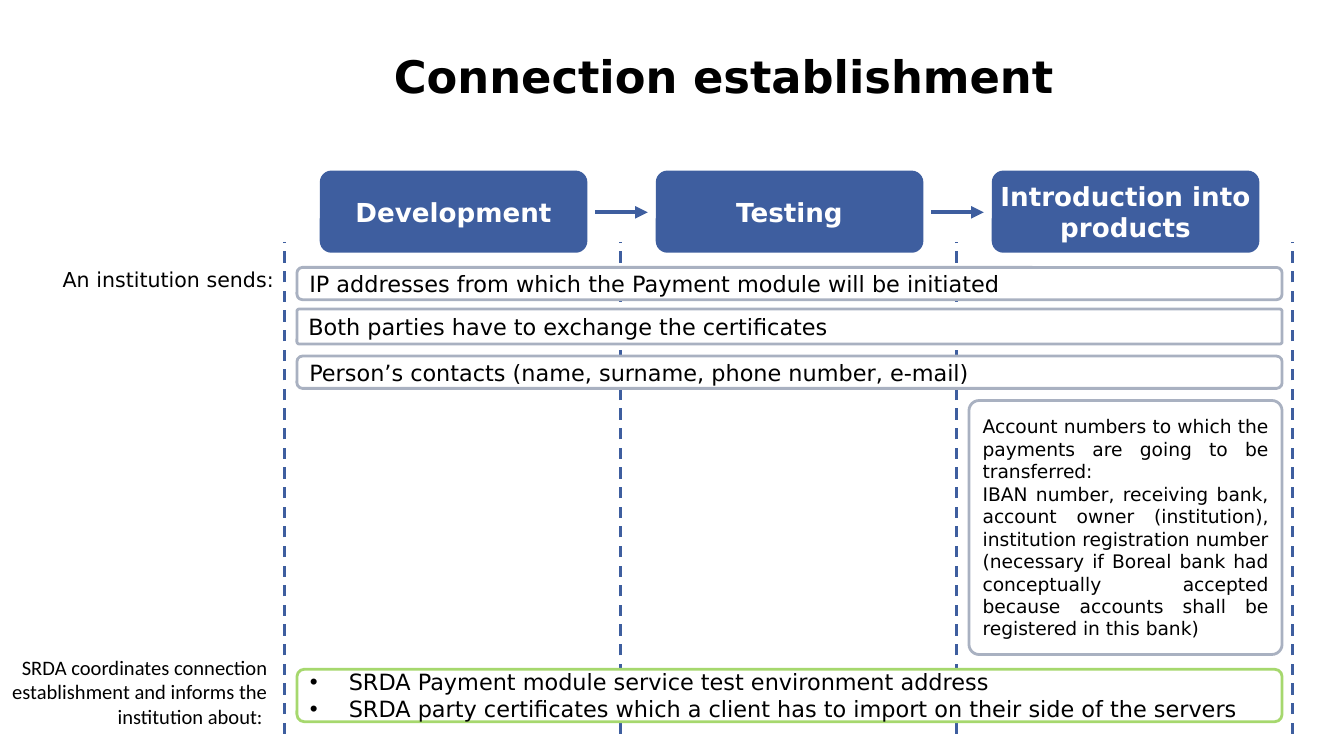
from pptx import Presentation
from pptx.dml.color import RGBColor
from pptx.enum.dml import MSO_LINE
from pptx.enum.shapes import MSO_CONNECTOR, MSO_SHAPE
from pptx.enum.text import MSO_ANCHOR, MSO_AUTO_SIZE, PP_ALIGN
from pptx.oxml.ns import qn
from pptx.util import Pt
from lxml.etree import SubElement

SCALE = 9144
BLUE, GREY, GREEN, WHITE, BLACK = "3E5E9F", "A9B1C1", "A6D86E", "FFFFFF", "000000"
SANS = "DejaVu Sans"

TITLE = "Connection establishment"
PHASES = ["Development", "Testing", "Introduction into products"]
LABELS = [
    ("An institution sends:", (8, 199, 196, 24), SANS),
    ("SRDA coordinates connection establishment and informs the institution about: ",
     (8, 487, 191, 61), "Calibri"),
]
CARDS = [
    dict(lines=["IP addresses from which the Payment module will be initiated"],
         place=(221, 199, 733, 24), corner=0.17),
    dict(lines=["Both parties have to exchange the certificates"],
         place=(221, 230, 733, 26), corner=0.06),
    dict(lines=["Person’s contacts (name, surname, phone number, e-mail)"],
         place=(221, 265, 733, 24), corner=0.17),
    dict(lines=["Account numbers to which the payments are going to be transferred:",
                "IBAN number, receiving bank, account owner (institution), institution "
                "registration number (necessary if Boreal bank had conceptually accepted "
                "because accounts shall be registered in this bank)"],
         place=(721, 298, 233, 189), corner=0.04, size=10),
    dict(lines=["SRDA Payment module service test environment address",
                "SRDA party certificates which a client has to import on their side of the servers"],
         place=(221, 498, 733, 39), corner=0.14, border=GREEN, bullet=True),
]

COLUMN_STEP = 250
DIVIDER_LEFT, DIVIDER_TOP, DIVIDER_BOTTOM = 212, 180, 546
PHASE_LEFT, PHASE_TOP, PHASE_WIDTH, PHASE_HEIGHT = 239, 128, 197, 59
ARROW_LEFT, ARROW_WIDTH, ARROW_Y = 443, 39, 158


def px(*values):
    return [value * SCALE for value in values]


def colour(hex_string):
    return RGBColor.from_string(hex_string)


def add_bullet(paragraph):
    properties = paragraph._p.get_or_add_pPr()
    properties.set("marL", str(29 * SCALE))
    properties.set("indent", str(-29 * SCALE))
    SubElement(properties, qn("a:buFont")).set("typeface", "Arial")
    SubElement(properties, qn("a:buChar")).set("char", "•")


def write(box, lines, align, insets, anchor=MSO_ANCHOR.MIDDLE, bullet=False,
          ink=BLACK, fit=MSO_AUTO_SIZE.NONE, **font):
    frame = box.text_frame
    left, top, right, bottom = px(*insets)
    settings = dict(word_wrap=True, auto_size=fit, vertical_anchor=anchor, margin_left=left,
                    margin_top=top, margin_right=right, margin_bottom=bottom)
    for name, value in settings.items():
        setattr(frame, name, value)
    for index, line in enumerate(lines):
        paragraph = frame.add_paragraph() if index else frame.paragraphs[0]
        paragraph.alignment = align
        if bullet:
            add_bullet(paragraph)
        span = paragraph.add_run()
        span.text = line
        span.font.color.rgb = colour(ink)
        for name, value in font.items():
            setattr(span.font, name, value)


def add_card(page, place, corner, fill, border):
    box = page.shapes.add_shape(MSO_SHAPE.ROUNDED_RECTANGLE, *px(*place))
    box.adjustments[0] = corner
    box.shadow.inherit = False
    box.fill.solid()
    box.fill.fore_color.rgb = colour(fill)
    box.line.color.rgb = colour(border)
    box.line.width = Pt(1.5)
    return box


def add_line(page, start, end, width, dash=None, arrow=False):
    line = page.shapes.add_connector(MSO_CONNECTOR.STRAIGHT, *px(*start, *end))
    line.line.color.rgb = colour(BLUE)
    line.line.width = Pt(width)
    if dash:
        line.line.dash_style = dash
    if arrow:
        SubElement(line.line._get_or_add_ln(), qn("a:tailEnd")).set("type", "triangle")
    SubElement(line._element.spPr, qn("a:effectLst"))


def main():
    deck = Presentation()
    deck.slide_width = 1000 * SCALE
    deck.slide_height = deck.slide_width * 9 // 16
    page = deck.slides.add_slide(deck.slide_layouts[5])

    title = page.shapes.title
    title.left, title.top, title.width, title.height = px(283, 31, 667, 85)
    write(title, [TITLE], PP_ALIGN.LEFT, (10, 5, 10, 5), MSO_ANCHOR.TOP,
          name=SANS, size=Pt(24), bold=True)

    for text, place, face in LABELS:
        label = page.shapes.add_textbox(*px(*place))
        write(label, [text], PP_ALIGN.RIGHT, (0, 0, 0, 5), MSO_ANCHOR.TOP,
              fit=MSO_AUTO_SIZE.SHAPE_TO_FIT_TEXT, name=face, size=Pt(11))

    for column in range(len(PHASES) + 1):
        x = DIVIDER_LEFT + column * COLUMN_STEP
        add_line(page, (x, DIVIDER_BOTTOM), (x, DIVIDER_TOP), 1.5, dash=MSO_LINE.DASH)

    for card in CARDS:
        box = add_card(page, card["place"], card["corner"], WHITE, card.get("border", GREY))
        write(box, card["lines"], PP_ALIGN.JUSTIFY, (8, 8, 8, 8),
              bullet=card.get("bullet", False), name=SANS, size=Pt(card.get("size", 12)))

    for column, phase in enumerate(PHASES):
        shift = column * COLUMN_STEP
        place = (PHASE_LEFT + shift, PHASE_TOP, PHASE_WIDTH, PHASE_HEIGHT)
        box = add_card(page, place, 0.13, BLUE, BLUE)
        write(box, [phase], PP_ALIGN.CENTER, (0, 5, 0, 5), ink=WHITE,
              name=SANS, size=Pt(14), bold=True)
        if column < len(PHASES) - 1:
            x = ARROW_LEFT + shift
            add_line(page, (x, ARROW_Y), (x + ARROW_WIDTH, ARROW_Y), 2.25, arrow=True)

    deck.save("out.pptx")


if __name__ == "__main__":
    main()
